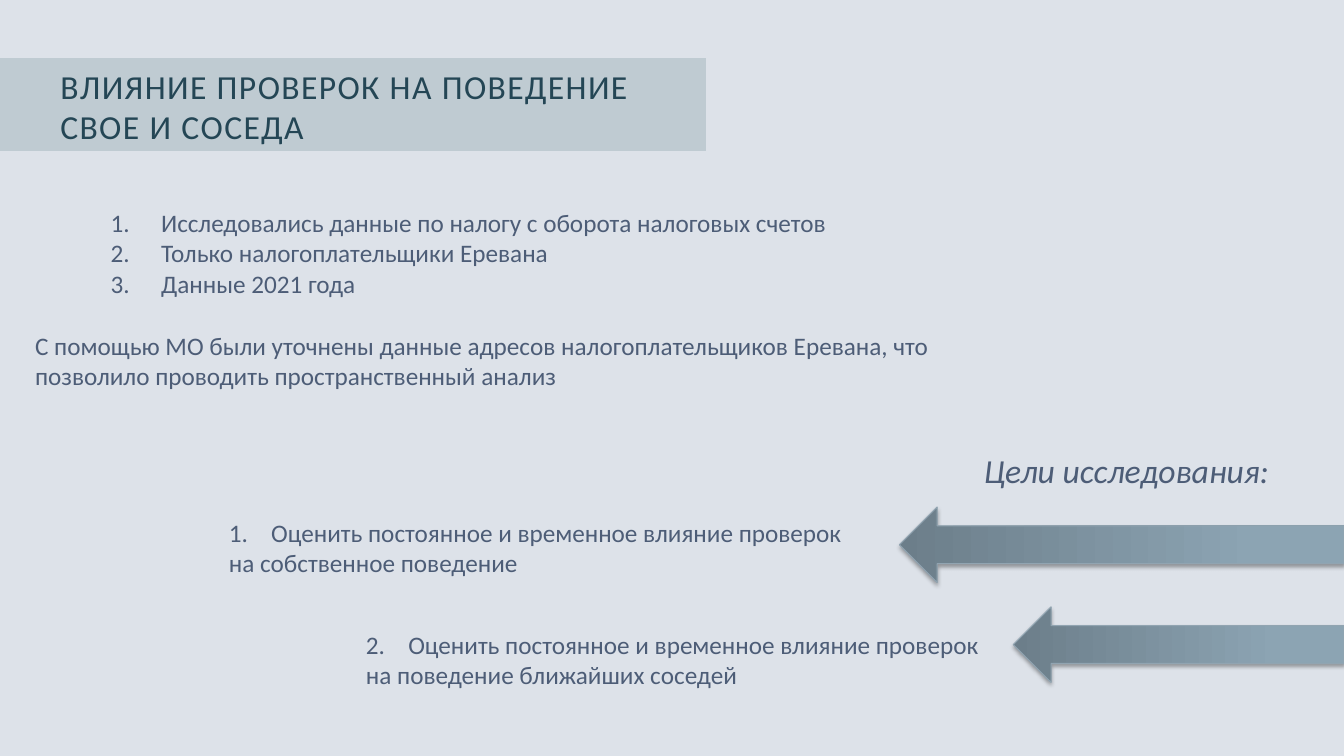
"""Builds a slide on how tax audits affect the behaviour of a firm and its neighbours."""
from lxml import etree
from pptx import Presentation
from pptx.dml.color import RGBColor
from pptx.enum.shapes import MSO_SHAPE
from pptx.enum.text import MSO_AUTO_SIZE
from pptx.oxml.ns import qn
from pptx.util import Inches, Pt

PROCESS = MSO_SHAPE.FLOWCHART_PROCESS
DOWN_ARROW = MSO_SHAPE.DOWN_ARROW
NO_AUTO_SIZE = MSO_AUTO_SIZE.NONE

BACKGROUND = RGBColor(0xDD, 0xE2, 0xE9)
BAND = RGBColor(0xBF, 0xCB, 0xD2)
TITLE_COLOR = RGBColor(0x24, 0x46, 0x55)
BODY_COLOR = RGBColor(0x4D, 0x5D, 0x77)
ARROW_LINE = RGBColor(0x91, 0xA4, 0xB1)
ARROW_STOPS = [
    (0, RGBColor(0x6C, 0x7E, 0x8A)),
    (80, RGBColor(0x8C, 0xA4, 0xB3)),
    (100, RGBColor(0x8C, 0xA5, 0xB5)),
]
SHADOW_COLOR = RGBColor(0, 0, 0)

FONT = "Calibri"
SLIDE_WIDTH, SLIDE_HEIGHT = 13.33, 7.5
ARROW_THICKNESS = 0.75
SPACE_BEFORE = 4.2
NUMBER_MARGIN, NUMBER_HANGING = 0.67, 0.5
GOAL_INSET, GOAL_TAB = 0.27, 0.42

TITLE = "ВЛИЯНИЕ ПРОВЕРОК НА ПОВЕДЕНИЕ СВОЕ И СОСЕДА"
DATA_POINTS = [
    "Исследовались данные по налогу с оборота налоговых счетов",
    "Только налогоплательщики Еревана",
    "Данные 2021 года",
]
METHOD = (
    "С помощью МО были уточнены данные адресов налогоплательщиков Еревана, "
    "что позволило проводить пространственный анализ"
)
GOALS_HEADING = "Цели исследования:"
GOALS = [
    {
        "text": "Оценить постоянное и временное влияние проверок на собственное поведение",
        "text_at": (2, 5.08),
        "arrow_at": (8.92, 5.03),
        "arrow_length": 4.41,
    },
    {
        "text": "Оценить постоянное и временное влияние проверок на поведение ближайших соседей",
        "text_at": (3.36, 6.19),
        "arrow_at": (10.05, 6.02),
        "arrow_length": 3.28,
    },
]


def add_element(parent, tag, **attributes):
    return etree.SubElement(
        parent, qn(tag), {name: str(value) for name, value in attributes.items()}
    )


def add_text(slide, box, lines, size=18, color=BODY_COLOR, italic=False, wrap=True,
             space_before=0):
    shape = slide.shapes.add_textbox(*map(Inches, box))
    frame = shape.text_frame
    frame.word_wrap = wrap
    frame.auto_size = NO_AUTO_SIZE
    frame.text = "\n".join(lines)
    for paragraph in frame.paragraphs:
        paragraph.font.name = FONT
        paragraph.font.size = Pt(size)
        paragraph.font.color.rgb = color
        paragraph.font.italic = italic
    frame.paragraphs[0].space_before = Pt(space_before)
    return frame


def set_number(paragraph):
    properties = paragraph._p.get_or_add_pPr()
    properties.set("marL", str(Inches(NUMBER_MARGIN)))
    properties.set("indent", str(-Inches(NUMBER_HANGING)))
    bullet = etree.Element(qn("a:buAutoNum"), type="arabicPeriod")
    properties.find(qn("a:defRPr")).addprevious(bullet)


def set_tab(paragraph, position):
    tabs = etree.Element(qn("a:tabLst"))
    add_element(tabs, "a:tab", pos=Inches(position), algn="l")
    paragraph._p.get_or_add_pPr().find(qn("a:defRPr")).addprevious(tabs)


def add_arrow(slide, left, top, length):
    center_x, center_y = left + length / 2, top + ARROW_THICKNESS / 2
    arrow = slide.shapes.add_shape(
        DOWN_ARROW,
        Inches(center_x - ARROW_THICKNESS / 2),
        Inches(center_y - length / 2),
        Inches(ARROW_THICKNESS),
        Inches(length),
    )
    arrow.rotation = 90
    arrow.line.color.rgb = ARROW_LINE
    arrow.line.width = Pt(0.75)
    arrow.shadow.inherit = False
    properties = arrow._element.spPr

    gradient = etree.Element(qn("a:gradFill"), rotWithShape="1")
    stops = add_element(gradient, "a:gsLst")
    for percent, color in ARROW_STOPS:
        stop = add_element(stops, "a:gs", pos=percent * 1000)
        add_element(stop, "a:srgbClr", val=color)
    add_element(gradient, "a:lin", ang=270 * 60000, scaled=0)
    properties.find(qn("a:ln")).addprevious(gradient)

    shadow = add_element(
        properties.find(qn("a:effectLst")), "a:outerShdw",
        blurRad=Pt(3.1), dist=Pt(1.8), dir=90 * 60000, rotWithShape=0,
    )
    shadow_color = add_element(shadow, "a:srgbClr", val=SHADOW_COLOR)
    add_element(shadow_color, "a:alpha", val=35000)


def main():
    presentation = Presentation()
    presentation.slide_width = Inches(SLIDE_WIDTH)
    presentation.slide_height = Inches(SLIDE_HEIGHT)
    slide = presentation.slides.add_slide(presentation.slide_layouts[6])
    slide.background.fill.solid()
    slide.background.fill.fore_color.rgb = BACKGROUND

    band = slide.shapes.add_shape(PROCESS, *map(Inches, (0, 0.58, 7, 0.92)))
    band.fill.solid()
    band.fill.fore_color.rgb = BAND
    band.line.fill.background()
    band.shadow.inherit = False

    title = add_text(slide, (0.5, 0.6, 6.66, 0.91), [TITLE], size=24, color=TITLE_COLOR)
    title.paragraphs[0].runs[0]._r.get_or_add_rPr().set("spc", "100")

    data_points = add_text(slide, (0.83, 2.01, 10, 1.01), DATA_POINTS,
                           space_before=SPACE_BEFORE)
    for paragraph in data_points.paragraphs:
        set_number(paragraph)

    add_text(slide, (0.25, 3.23, 9.16, 0.71), [METHOD])
    add_text(slide, (9.66, 4.41, 3.06, 0.5), [GOALS_HEADING], size=24, italic=True,
             wrap=False, space_before=SPACE_BEFORE)

    for number, goal in enumerate(GOALS, start=1):
        add_arrow(slide, *goal["arrow_at"], goal["arrow_length"])
        frame = add_text(slide, (*goal["text_at"], 6.66, 0.71),
                         [f"{number}.\t{goal['text']}"], space_before=SPACE_BEFORE)
        frame.margin_left = Inches(GOAL_INSET)
        set_tab(frame.paragraphs[0], GOAL_TAB)

    presentation.save("out.pptx")


if __name__ == "__main__":
    main()
